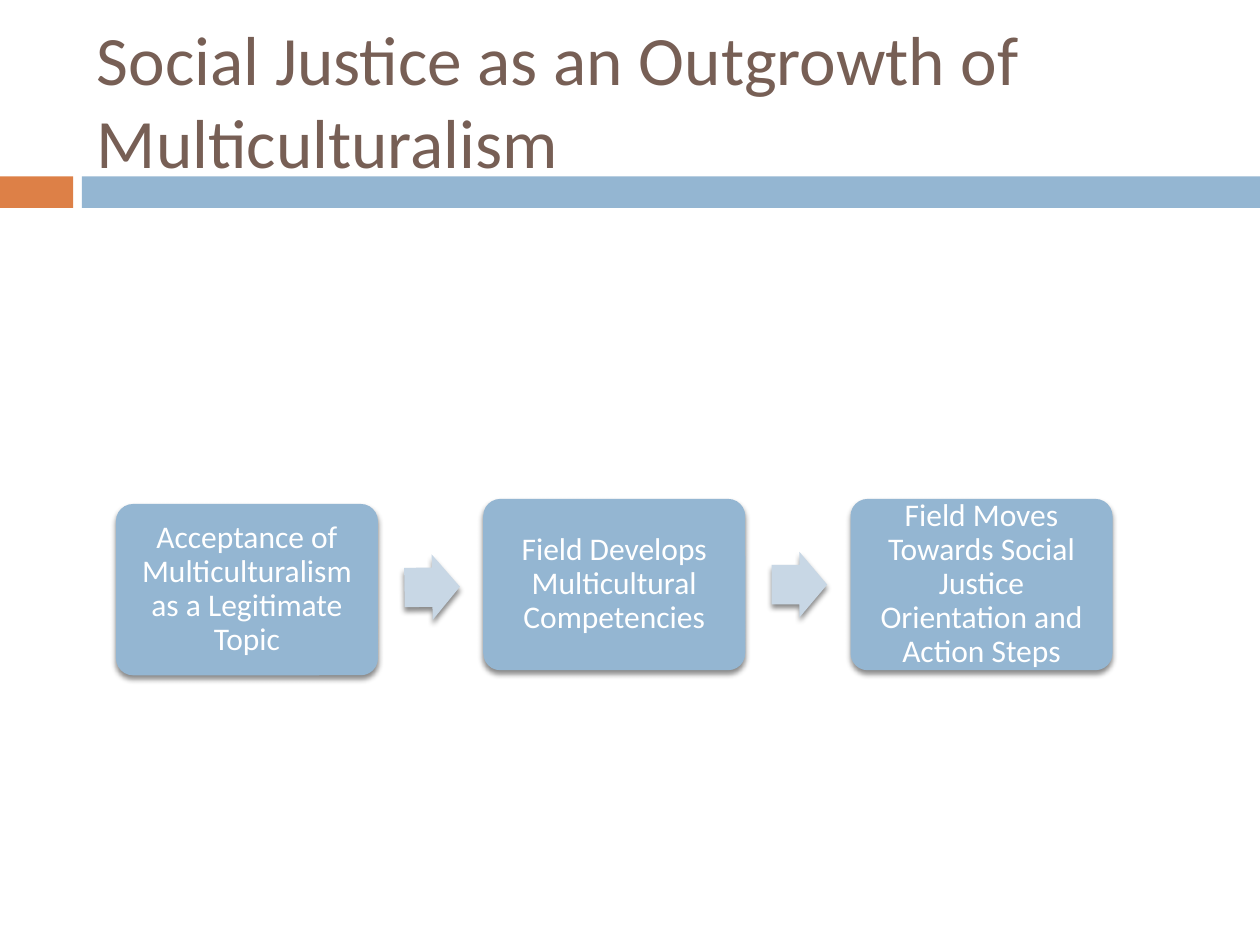
from lxml.etree import SubElement
from pptx import Presentation
from pptx.dml.color import RGBColor
from pptx.enum.shapes import MSO_SHAPE as Shape
from pptx.enum.text import MSO_ANCHOR as Anchor, PP_ALIGN as Align
from pptx.oxml.ns import qn
from pptx.util import Inches, Pt

COLUMNS, ROWS = 100, 75
STEPS = [
    ("Acceptance of Multiculturalism as a Legitimate Topic", 40),
    ("Field Develops Multicultural Competencies", 39.6),
    ("Field Moves Towards Social Justice Orientation and Action Steps", 39.6),
]
ARROWS = [(44, 359.1), (43.8, 0)]
FIRST_STEP, FIRST_ARROW, STEP_PITCH = 9.2, 32.1, 29.15


def color(value):
    return RGBColor.from_string(value)


class SlideBuilder:
    font = "Calibri"
    orange, blue, pale_blue = "DD8047", "94B6D2", "C8D7E5"
    brown, white, black = "775F55", "FFFFFF", "000000"

    def __init__(self, presentation):
        self.slide = presentation.slides.add_slide(presentation.slide_layouts[6])
        self.column = presentation.slide_width / COLUMNS
        self.row = presentation.slide_height / ROWS

    def place(self, left, top, width, height):
        return (round(left * self.column), round(top * self.row),
                round(width * self.column), round(height * self.row))

    def block(self, kind, box, fill):
        shape = self.slide.shapes.add_shape(kind, *self.place(*box))
        shape.shadow.inherit = False
        shape.fill.solid()
        shape.fill.fore_color.rgb = color(fill)
        shape.line.fill.background()
        return shape

    def drop_shadow(self, shape):
        effects = shape.element.spPr.find(qn("a:effectLst"))
        shadow = SubElement(effects, qn("a:outerShdw"), blurRad=str(Pt(3)),
                            dist=str(Pt(2.4)), dir="5400000", rotWithShape="0")
        tint = SubElement(shadow, qn("a:srgbClr"), val=self.black)
        SubElement(tint, qn("a:alpha"), val="45000")

    def label(self, shape, text, size, ink, align):
        frame = shape.text_frame
        frame.text = text
        frame.word_wrap = True
        frame.vertical_anchor = Anchor.MIDDLE
        paragraph = frame.paragraphs[0]
        paragraph.alignment = align
        font = paragraph.runs[0].font
        font.name, font.size = self.font, Pt(size)
        font.color.rgb = color(ink)
        return frame

    def title(self, text, box):
        shape = self.slide.shapes.add_textbox(*self.place(*box))
        self.label(shape, text, 39.6, self.brown, Align.LEFT)

    def step(self, text, left, top):
        shape = self.block(Shape.ROUNDED_RECTANGLE, (left, top, 20.8, 13.6), self.blue)
        shape.adjustments[0] = 0.1
        self.drop_shadow(shape)
        frame = self.label(shape, text, 18, self.white, Align.CENTER)
        frame.margin_left = frame.margin_right = Inches(0.07)
        frame.margin_top = frame.margin_bottom = Inches(0.07)
        frame.paragraphs[0].line_spacing = 0.9

    def arrow(self, left, top, rotation):
        shape = self.block(Shape.RIGHT_ARROW, (left, top, 4.4, 5.2), self.pale_blue)
        shape.adjustments[0] = 0.6
        shape.adjustments[1] = 0.5
        shape.rotation = rotation
        self.drop_shadow(shape)


def main():
    presentation = Presentation()
    presentation.slide_width = Inches(10)
    presentation.slide_height = Inches(7.5)
    builder = SlideBuilder(presentation)
    builder.block(Shape.RECTANGLE, (0, 14, 5.8, 2.5), builder.orange)
    builder.block(Shape.RECTANGLE, (6.5, 14, 93.5, 2.5), builder.blue)
    builder.title("Social Justice as an Outgrowth of Multiculturalism",
                  (6.7, 2.5, 89.2, 10.8))
    for index, (text, top) in enumerate(STEPS):
        builder.step(text, FIRST_STEP + index * STEP_PITCH, top)
    for index, (top, rotation) in enumerate(ARROWS):
        builder.arrow(FIRST_ARROW + index * STEP_PITCH, top, rotation)
    presentation.save("out.pptx")


if __name__ == "__main__":
    main()
